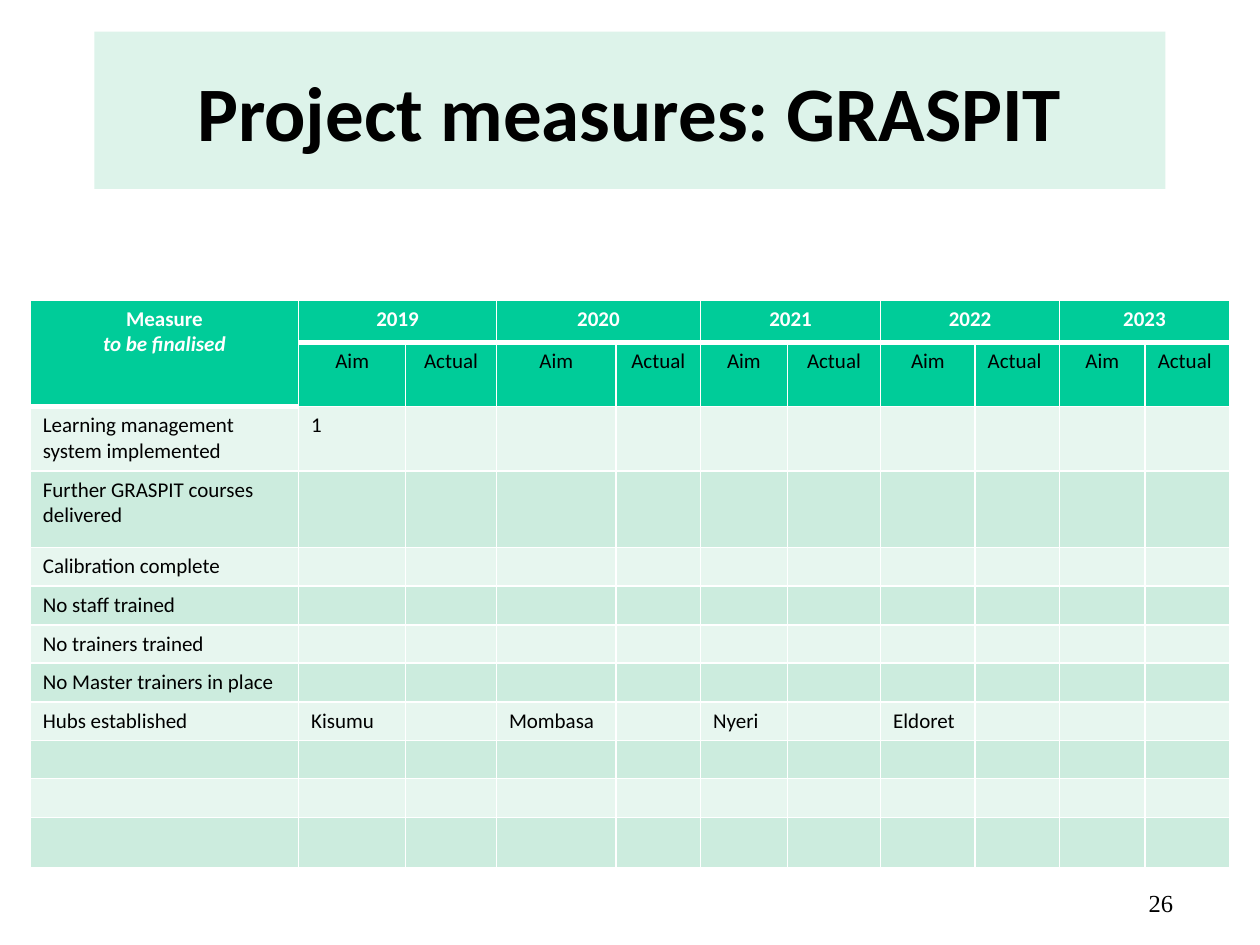
from dataclasses import dataclass

import pptx
import pptx.util
import pptx.dml.color
import pptx.enum.shapes
import pptx.enum.text
import pptx.oxml.ns
from lxml import etree

Inches = pptx.util.Inches
Pt = pptx.util.Pt
ALIGN = pptx.enum.text.PP_ALIGN
MIDDLE = pptx.enum.text.MSO_ANCHOR.MIDDLE


@dataclass(frozen=True)
class Theme:
    title_fill: str = "DDF3EA"
    header: str = "00CC99"
    bands: tuple = ("E7F6EF", "CCECDE")
    ink: str = "000000"
    white: str = "FFFFFF"
    font: str = "Calibri"
    number_font: str = "Times New Roman"
    title_size: int = 44
    table_size: int = 12
    number_size: int = 14
    rule: int = 1
    heavy_rule: int = 3


def rgb(value):
    return pptx.dml.color.RGBColor.from_string(value)


class SlideBuilder:
    def __init__(self, prs, theme):
        self.theme = theme
        self.s = prs.slides.add_slide(prs.slide_layouts[6])

    def style(self, p, size, color, name, bold=False, italic=False, align=None):
        p.alignment = align
        f = p.font
        f.size, f.name, f.bold, f.italic = Pt(size), name, bold, italic
        f.color.rgb = rgb(color)

    def title(self, text, box):
        t = self.theme
        sp = self.s.shapes.add_shape(pptx.enum.shapes.MSO_SHAPE.RECTANGLE, *map(Inches, box))
        sp.shadow.inherit = False
        sp.fill.solid()
        sp.fill.fore_color.rgb = rgb(t.title_fill)
        sp.line.fill.background()
        tf = sp.text_frame
        tf.word_wrap, tf.vertical_anchor = True, MIDDLE
        tf.text = text
        self.style(tf.paragraphs[0], t.title_size, t.ink, t.font, bold=True, align=ALIGN.CENTER)

    def page_number(self, text, box):
        t = self.theme
        tf = self.s.shapes.add_textbox(*map(Inches, box)).text_frame
        tf.word_wrap = True
        tf.text = text
        self.style(tf.paragraphs[0], t.number_size, t.ink, t.number_font, align=ALIGN.RIGHT)

    def table(self, left, top, widths, heights):
        frame = self.s.shapes.add_table(len(heights), len(widths), Inches(left), Inches(top),
                                        Inches(sum(widths)), Inches(sum(heights)))
        table = frame.table
        table.first_row = table.horz_banding = False
        for column, width in zip(table.columns, widths):
            column.width = Inches(width)
        for row, height in zip(table.rows, heights):
            row.height = Inches(height)
        return table

    def cell(self, cell, text, fill, color, bold=False, align=None, heavy=()):
        t = self.theme
        cell.text = text
        for p in cell.text_frame.paragraphs:
            self.style(p, t.table_size, color, t.font, bold, align=align)
            if not text:  # an empty cell takes its line height from here
                p._p.get_or_add_endParaRPr().set("sz", str(t.table_size * 100))
        self.borders(cell, heavy)
        cell.fill.solid()
        cell.fill.fore_color.rgb = rgb(fill)

    def borders(self, cell, heavy):
        t = self.theme
        qn = pptx.oxml.ns.qn
        tcPr = cell._tc.get_or_add_tcPr()
        for side in "LRTB":
            width = t.heavy_rule if side in heavy else t.rule
            ln = etree.SubElement(tcPr, qn(f"a:ln{side}"), w=str(Pt(width)))
            fill = etree.SubElement(ln, qn("a:solidFill"))
            etree.SubElement(fill, qn("a:srgbClr"), val=t.white)


YEARS = ["2019", "2020", "2021", "2022", "2023"]
LEFT_ALIGNED = (8, 10)  # "Actual" columns of the last two years

# Measure name, then the aim for each year where one is set
MEASURES = [
    ("Learning management system implemented", "1"),
    ("Further GRASPIT courses delivered",),
    ("Calibration complete",),
    ("No staff trained",),
    ("No trainers trained",),
    ("No Master trainers in place",),
    ("Hubs established", "Kisumu", "Mombasa", "Nyeri", "Eldoret"),
    ("",),
    ("",),
    ("",),
]
WIDTHS = [2.13, 0.85, 0.72, 0.95, 0.67, 0.69, 0.74, 0.75, 0.67, 0.68, 0.67]
HEIGHTS = [0.34, 0.5, 0.51, 0.61] + [0.3, 0.31] * 2 + [0.3, 0.3, 0.31, 0.4]


def main():
    prs = pptx.Presentation()
    prs.slide_width, prs.slide_height = Inches(10), Inches(7.5)
    theme = Theme()
    b = SlideBuilder(prs, theme)

    b.title("Project measures: GRASPIT", (0.75, 0.25, 8.5, 1.25))
    table = b.table(0.24, 2.38, WIDTHS, HEIGHTS)

    # Header: the measure cell, then each year over its aim and actual
    head = dict(fill=theme.header, color=theme.white, bold=True, align=ALIGN.CENTER, heavy="B")
    measure = table.cell(0, 0)
    b.cell(measure, "Measure\nto be finalised", **head)
    measure.text_frame.paragraphs[1].font.italic = True
    b.cell(table.cell(1, 0), "", **head)
    measure.merge(table.cell(1, 0))
    for i, year in enumerate(YEARS):
        col = 1 + 2 * i
        b.cell(table.cell(0, col), year, **head)
        b.cell(table.cell(0, col + 1), "", **head)
        table.cell(0, col).merge(table.cell(0, col + 1))
        for c, label in ((col, "Aim"), (col + 1, "Actual")):
            align = None if c in LEFT_ALIGNED else ALIGN.CENTER
            b.cell(table.cell(1, c), label, theme.header, theme.ink, align=align, heavy="T")

    # Body: banded rows, aims in every second column
    for i, (name, *aims) in enumerate(MEASURES):
        texts = {0: name, **{1 + 2 * k: aim for k, aim in enumerate(aims)}}
        for col in range(len(WIDTHS)):
            heavy = "T" if i == col == 0 else ""
            b.cell(table.cell(i + 2, col), texts.get(col, ""), theme.bands[i % 2],
                   theme.ink, heavy=heavy)

    b.page_number("26", (8.58, 7, 0.83, 0.42))
    prs.save("out.pptx")


if __name__ == "__main__":
    main()
